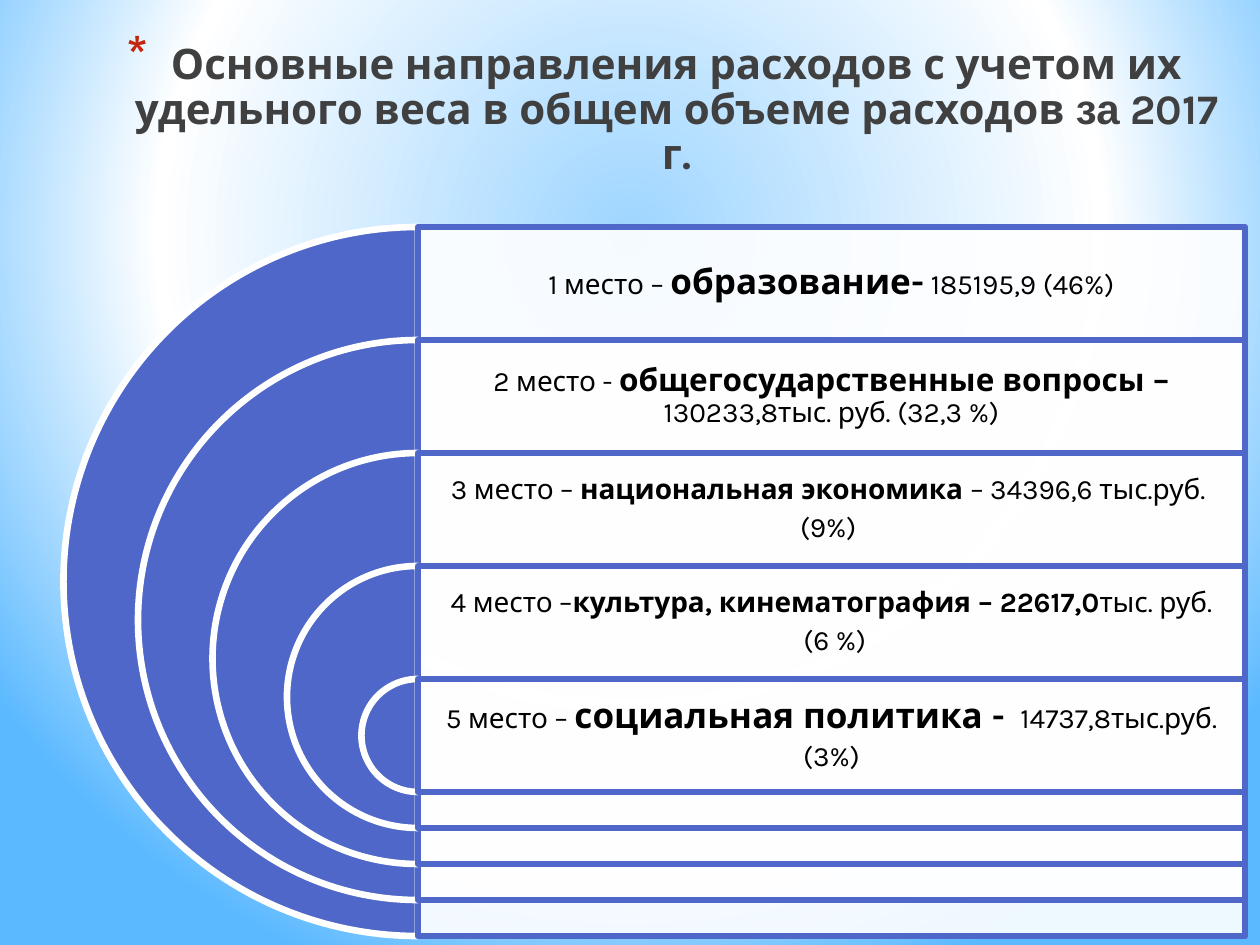
from dataclasses import dataclass

from pptx import Presentation
from pptx.dml.color import RGBColor
from pptx.enum.shapes import MSO_SHAPE
from pptx.enum.text import MSO_ANCHOR, PP_ALIGN
from pptx.oxml import parse_xml
from pptx.oxml.ns import nsdecls, qn
from pptx.util import Pt
from lxml.etree import SubElement


@dataclass(frozen=True)
class Theme:
    blue: str = "4E67C8"
    white: str = "FFFFFF"
    black: str = "000000"
    gray: str = "404040"
    red: str = "C3260C"
    glow: tuple = ((0, "9ED5FF"), (60, "FFFFFF"), (100, "5BB9FF"))
    font: str = "Karla"
    plain: str = "Arial"
    head: int = 24
    big: int = 20
    mid: int = 18
    base: int = 16
    line: float = 3.78


THEME = Theme()
SCALE = 914400 / 126
LEFT, TOP, WIDTH = 418, 227, 827
STEP, SHRINK = 113, 149

TITLE = [
    ("Основные направления расходов с учетом их удельного веса "
     "в общем объеме расходов ", THEME.font),
    ("за", THEME.plain),
    (" 2017 г.", THEME.font),
]

ROWS = [
    [[("1 место – ", THEME.base, False),
      ("образование-", THEME.big, True),
      (" 185195,9 (46%)", THEME.base, False)]],
    [[("2 место - ", THEME.base, False),
      ("общегосударственные вопросы – ", THEME.mid, True),
      ("130233,8тыс. руб. (32,3 %)", THEME.base, False)]],
    [[("3 место – ", THEME.base, False),
      ("национальная экономика ", THEME.base, True),
      ("– 34396,6 тыс.руб. ", THEME.base, False)],
     [("(9%) ", THEME.base, False)]],
    [[("4 место –", THEME.base, False),
      ("культура, кинематография – 22617,0", THEME.base, True),
      ("тыс. руб.", THEME.base, False)],
     [(" (6 %)", THEME.base, False)]],
    [[("5 место – ", THEME.base, False),
      ("социальная политика - ", THEME.big, True),
      (" 14737,8тыс.руб.", THEME.base, False)],
     [("(3%)", THEME.base, False)]],
]


def px(num):
    return round(num * SCALE)


def paint(slide):
    stops = "".join(
        f'<a:gs pos="{pos * 1000}"><a:srgbClr val="{color}"/></a:gs>'
        for pos, color in THEME.glow)
    slide.element.cSld.insert(0, parse_xml(
        f'<p:bg {nsdecls("p", "a")}><p:bgPr><a:gradFill rotWithShape="1">'
        f'<a:gsLst>{stops}</a:gsLst><a:path path="circle">'
        '<a:fillToRect l="20000" t="10000" r="20000" b="60000"/></a:path>'
        '</a:gradFill><a:effectLst/></p:bgPr></p:bg>'))


def add_text(slide, box, inset, anchor):
    frame = slide.shapes.add_textbox(*map(px, box)).text_frame
    frame.word_wrap = True
    frame.vertical_anchor = anchor
    frame.margin_left = frame.margin_right = px(inset[0])
    frame.margin_top = frame.margin_bottom = px(inset[1])
    return frame


def set_para(para):
    para.alignment = PP_ALIGN.CENTER
    para.line_spacing = 0.9


def add_run(para, text, font, size, bold, color):
    run = para.add_run()
    run.text = text
    run.font.name = font
    run.font.size = Pt(size)
    run.font.bold = bold
    run.font.color.rgb = RGBColor.from_string(color)


def add_title(slide):
    frame = add_text(slide, (74, 37, 1161, 139), (12, 6), MSO_ANCHOR.TOP)
    para = frame.paragraphs[0]
    set_para(para)
    for text, font in TITLE:
        add_run(para, text, font, THEME.head, True, THEME.gray)
    props = para._p.get_or_add_pPr()
    props.set("marL", str(px(44)))
    props.set("indent", str(-px(44)))
    color = SubElement(props, qn("a:buClr"))
    SubElement(color, qn("a:srgbClr")).set("val", THEME.red)
    SubElement(props, qn("a:buSzPct")).set("val", "128000")
    SubElement(props, qn("a:buChar")).set("char", "*")


def add_form(slide, kind, box, fill, line):
    shape = slide.shapes.add_shape(kind, *map(px, box))
    shape.shadow.inherit = False
    shape.fill.solid()
    shape.fill.fore_color.rgb = RGBColor.from_string(fill)
    shape.line.color.rgb = RGBColor.from_string(line)
    shape.line.width = Pt(THEME.line)
    return shape


def add_pie(slide, top, size):
    box = (LEFT - size / 2, top, size, size)
    pie = add_form(slide, MSO_SHAPE.PIE, box, THEME.blue, THEME.white)
    pie.adjustments[0] = 54
    pie.adjustments[1] = 162


def add_panel(slide, top, size):
    box = (LEFT, top, WIDTH, size)
    panel = add_form(slide, MSO_SHAPE.RECTANGLE, box, THEME.white, THEME.blue)
    color = panel.fill._xPr.find(qn("a:solidFill"))[0]
    SubElement(color, qn("a:alpha")).set("val", "90000")


def add_label(slide, top, row):
    box = (LEFT, top, WIDTH, STEP)
    frame = add_text(slide, box, (9, 9), MSO_ANCHOR.MIDDLE)
    for num, runs in enumerate(row):
        para = frame.add_paragraph() if num else frame.paragraphs[0]
        set_para(para)
        para.space_after = Pt(4)
        for text, size, bold in runs:
            add_run(para, text, THEME.font, size, bold, THEME.black)


def main():
    deck = Presentation()
    deck.slide_width, deck.slide_height = px(1260), px(945)
    slide = deck.slides.add_slide(deck.slide_layouts[6])
    paint(slide)
    add_title(slide)
    for rank, row in enumerate(ROWS):
        top = TOP + STEP * rank
        size = STEP + SHRINK * (len(ROWS) - 1 - rank)
        add_pie(slide, top, size)
        add_panel(slide, top, size)
        add_label(slide, top, row)
    deck.save("out.pptx")


if __name__ == "__main__":
    main()
